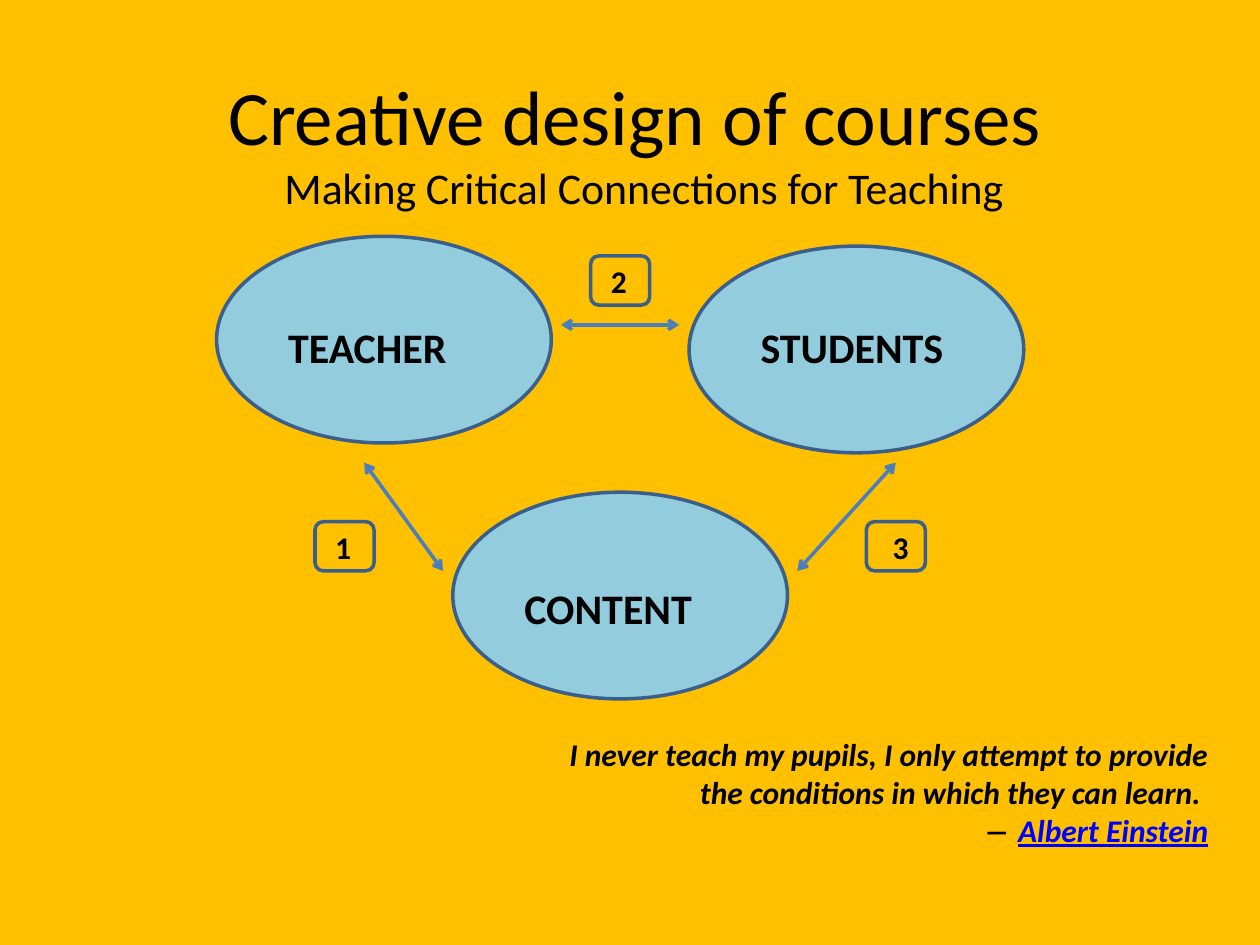
from dataclasses import dataclass

from lxml.etree import SubElement
from pptx import Presentation
from pptx.dml.color import RGBColor
from pptx.enum.shapes import MSO_CONNECTOR, MSO_SHAPE
from pptx.enum.text import MSO_ANCHOR, PP_ALIGN
from pptx.oxml.ns import qn
from pptx.util import Inches, Pt

COLORS = {
    "background": "FFC000",
    "ellipse": "93CDDD",
    "outline": "3A5F8C",
    "arrow": "4B7EBC",
    "text": "000000",
    "link": "0000FF",
}
FONT = "Calibri"
WIDTH, HEIGHT = Inches(10), Inches(7.5)
COLS, ROWS = 64, 96


@dataclass
class Topic:
    name: str
    col: float
    row: float
    label_row: float


@dataclass
class Badge:
    number: str
    col: float
    row: float
    inset: float


@dataclass
class Arrow:
    start: tuple[float, float]
    end: tuple[float, float]


TOPICS = [
    Topic("TEACHER", 11, 24, 32),
    Topic("CONTENT", 23, 50, 58.5),
    Topic("STUDENTS", 35, 25, 32),
]
ARROWS = [
    Arrow((28.5, 33), (34.5, 33)),
    Arrow((45.5, 47), (40.5, 58)),
    Arrow((18.5, 47), (22.5, 58)),
]
BADGES = [
    Badge("1", 16, 53, 0.16),
    Badge("2", 30, 26, 0.16),
    Badge("3", 44, 53, 0.21),
]


def rgb(name: str) -> RGBColor:
    return RGBColor.from_string(COLORS[name])


def x(col: float) -> int:
    return round(WIDTH * col / COLS)


def y(row: float) -> int:
    return round(HEIGHT * row / ROWS)


def add_outlined(s, kind, col: float, row: float, cols: float, rows: float, fill=None) -> None:
    sp = s.shapes.add_shape(kind, x(col), y(row), x(cols), y(rows))
    sp.shadow.inherit = False
    if fill:
        sp.fill.solid()
        sp.fill.fore_color.rgb = rgb(fill)
    else:
        sp.fill.background()
    sp.line.color.rgb = rgb("outline")
    sp.line.width = Pt(2)


def add_text(s, text: str, col: float, row: float, cols: float, rows: float, size: float,
             bold: bool = True, align=PP_ALIGN.LEFT, anchor=MSO_ANCHOR.TOP):
    tf = s.shapes.add_textbox(x(col), y(row), x(cols), y(rows)).text_frame
    tf.word_wrap = True
    tf.vertical_anchor = anchor
    p = tf.paragraphs[0]
    p.text = text
    p.alignment = align
    p.font.name = FONT
    p.font.size = Pt(size)
    p.font.bold = bold
    p.font.color.rgb = rgb("text")
    return tf


def add_topic(s, topic: Topic) -> None:
    add_outlined(s, MSO_SHAPE.OVAL, topic.col, topic.row, 17, 21, "ellipse")
    add_text(s, topic.name, topic.col + 3, topic.label_row, 12, 6.4, 24)


def add_badge(s, badge: Badge) -> None:
    add_outlined(s, MSO_SHAPE.ROUNDED_RECTANGLE, badge.col, badge.row, 3, 5)
    tf = add_text(s, badge.number, badge.col, badge.row, 3, 5.1, 18)
    tf.margin_left = Inches(badge.inset)


def add_arrow(s, arrow: Arrow) -> None:
    (c1, r1), (c2, r2) = arrow.start, arrow.end
    cx = s.shapes.add_connector(MSO_CONNECTOR.STRAIGHT, x(c1), y(r1), x(c2), y(r2))
    cx.line.color.rgb = rgb("arrow")
    cx.line.width = Pt(2)
    ln = cx.line._get_or_add_ln()
    for tag in ("a:headEnd", "a:tailEnd"):
        SubElement(ln, qn(tag), type="arrow")
    SubElement(cx._element.spPr, qn("a:effectLst"))


def add_title(s) -> None:
    tf = add_text(s, "Creative design of courses \v", 5.5, 4, 54.4, 20.6, 44,
                  bold=False, align=PP_ALIGN.CENTER, anchor=MSO_ANCHOR.MIDDLE)
    r = tf.paragraphs[0].add_run()
    r.text = "Making Critical Connections for Teaching"
    r.font.size = Pt(25)


def add_quote(s) -> None:
    quote = "I never teach my pupils, I only attempt to provide the conditions in which they can learn. \v― "
    tf = add_text(s, quote, 27, 74, 35, 12.9, 18,
                  align=PP_ALIGN.RIGHT, anchor=MSO_ANCHOR.MIDDLE)
    p = tf.paragraphs[0]
    p.font.italic = True
    r = p.add_run()
    r.text = "Albert Einstein"
    r.font.underline = True
    r.font.color.rgb = rgb("link")


def main() -> None:
    prs = Presentation()
    prs.slide_width, prs.slide_height = WIDTH, HEIGHT
    s = prs.slides.add_slide(prs.slide_layouts[6])
    s.background.fill.solid()
    s.background.fill.fore_color.rgb = rgb("background")
    add_title(s)
    for topic in TOPICS:
        add_topic(s, topic)
    for arrow in ARROWS:
        add_arrow(s, arrow)
    for badge in BADGES:
        add_badge(s, badge)
    add_quote(s)
    prs.save("out.pptx")


if __name__ == "__main__":
    main()
